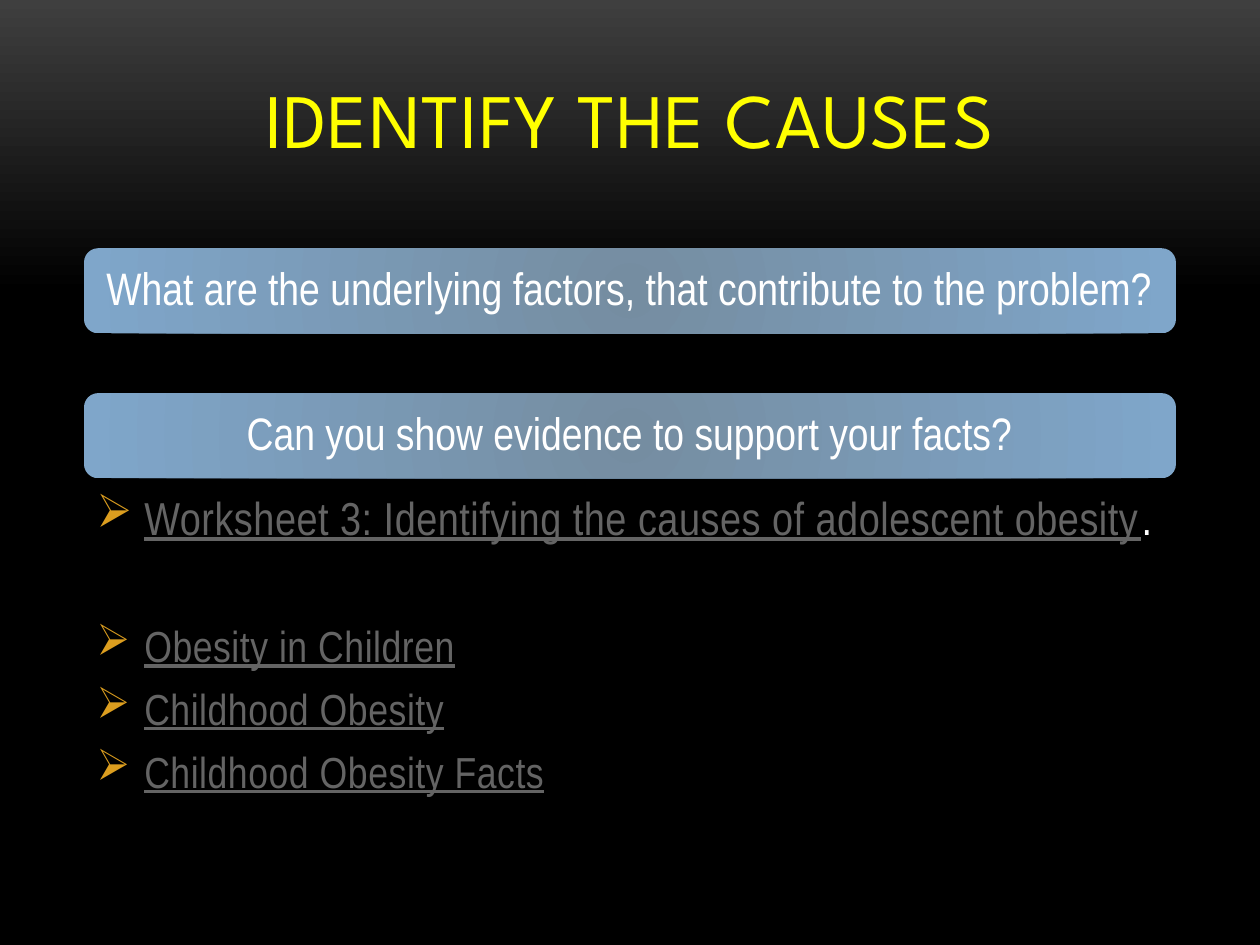
from lxml import etree
from pptx import Presentation
from pptx.dml.color import RGBColor
from pptx.enum.shapes import MSO_SHAPE
from pptx.enum.text import MSO_ANCHOR, PP_ALIGN
from pptx.oxml.ns import qn
from pptx.util import Inches, Pt

ROUND = MSO_SHAPE.ROUNDED_RECTANGLE
MIDDLE, BOTTOM = MSO_ANCHOR.MIDDLE, MSO_ANCHOR.BOTTOM
CENTER = PP_ALIGN.CENTER

THEME = {
    "title": "FFFF00", "text": "FFFFFF", "link": "646464", "bullet": "DC9E1F",
    "back": ("3F3F3F", "000000"), "bar": ("758DA1", "7FA6CA"),
    "head font": "League Spartan", "body font": "Arial Narrow",
    "head size": 44, "bar size": 26, "lead size": 26.4, "link size": 24.8,
}


def style(run, face, size, color, track=0):
    """Set the look of a run; track is letter spacing in points."""
    font = run.font
    font.name, font.size = THEME[face], Pt(THEME[size])
    font.color.rgb = RGBColor.from_string(THEME[color])
    if track:
        run._r.get_or_add_rPr().set("spc", str(round(track * 100)))


def blend(fill, name, ends):
    """Fill with the theme's two colours, placed at the given ends."""
    fill.gradient()
    for stop, color, end in zip(fill.gradient_stops, THEME[name], ends):
        stop.color.rgb = RGBColor.from_string(color)
        stop.position = end


deck = Presentation()
deck.slide_width, deck.slide_height = Inches(10), Inches(7.5)
wide, high = deck.slide_width, deck.slide_height
slide = deck.slides.add_slide(deck.slide_layouts[6])
shapes = slide.shapes
left, span = round(wide / 15), round(wide * 13 / 15)

back = slide.background.fill
blend(back, "back", (0, 0.31))
back.gradient_angle = 270

# Title
title = shapes.add_textbox(left, round(high * 0.04), span, round(high * 0.14))
frame = title.text_frame
frame.word_wrap, frame.vertical_anchor = True, BOTTOM
frame.text = "IDENTIFY THE CAUSES"
frame.paragraphs[0].alignment = CENTER
style(frame.paragraphs[0].runs[0], "head font", "head size", "title", 0.5)

# Question bars
asks = ["What are the underlying factors, that contribute to the problem?",
        "Can you show evidence to support your facts?"]
top, step = Inches(1.97), Inches(1.15)
for row, ask in enumerate(asks):
    bar = shapes.add_shape(ROUND, left, top + row * step, span, round(high * 0.09))
    bar.shadow.inherit = False
    blend(bar.fill, "bar", (0, 1))
    bar.line.fill.background()
    grad = bar._element.spPr.find(qn("a:gradFill"))
    grad.remove(grad.find(qn("a:lin")))
    ring = etree.SubElement(grad, qn("a:path"), path="circle")
    etree.SubElement(ring, qn("a:fillToRect"), dict.fromkeys("ltrb", "100000"))
    frame = bar.text_frame
    frame.word_wrap, frame.vertical_anchor = True, MIDDLE
    frame.margin_left = frame.margin_right = Inches(0.14)
    frame.text = ask
    para = frame.paragraphs[0]
    para.alignment, para.line_spacing = CENTER, 0.9
    style(para.runs[0], "body font", "bar size", "text")

# Linked resources: text, ending, size, space before
links = [
    ("Worksheet 3: Identifying the causes of adolescent obesity", ".", "lead size", 0),
    ("Obesity in Children", "", "link size", 42.5),
    ("Childhood Obesity", "", "link size", 6),
    ("Childhood Obesity Facts", "", "link size", 6),
]
body = shapes.add_textbox(left, Inches(3.92), span, Inches(2.75))
frame = body.text_frame
frame.word_wrap = True
frame.text = "\n".join(link[0] for link in links)
for para, (_, end, size, gap) in zip(frame.paragraphs, links):
    props = para._p.get_or_add_pPr()
    props.set("marL", str(Inches(0.38)))
    props.set("indent", str(-Inches(0.38)))
    tint = etree.SubElement(props, qn("a:buClr"))
    etree.SubElement(tint, qn("a:srgbClr"), val=THEME["bullet"])
    etree.SubElement(props, qn("a:buChar"), char="➢")
    para.line_spacing = 0.8
    para.space_before, para.space_after = Pt(gap), Pt(6)
    style(para.runs[0], "body font", size, "link", 0.3)
    para.runs[0].font.underline = True
    if end:
        dot = para.add_run()
        dot.text = end
        style(dot, "body font", size, "text", 0.3)

deck.save("out.pptx")
